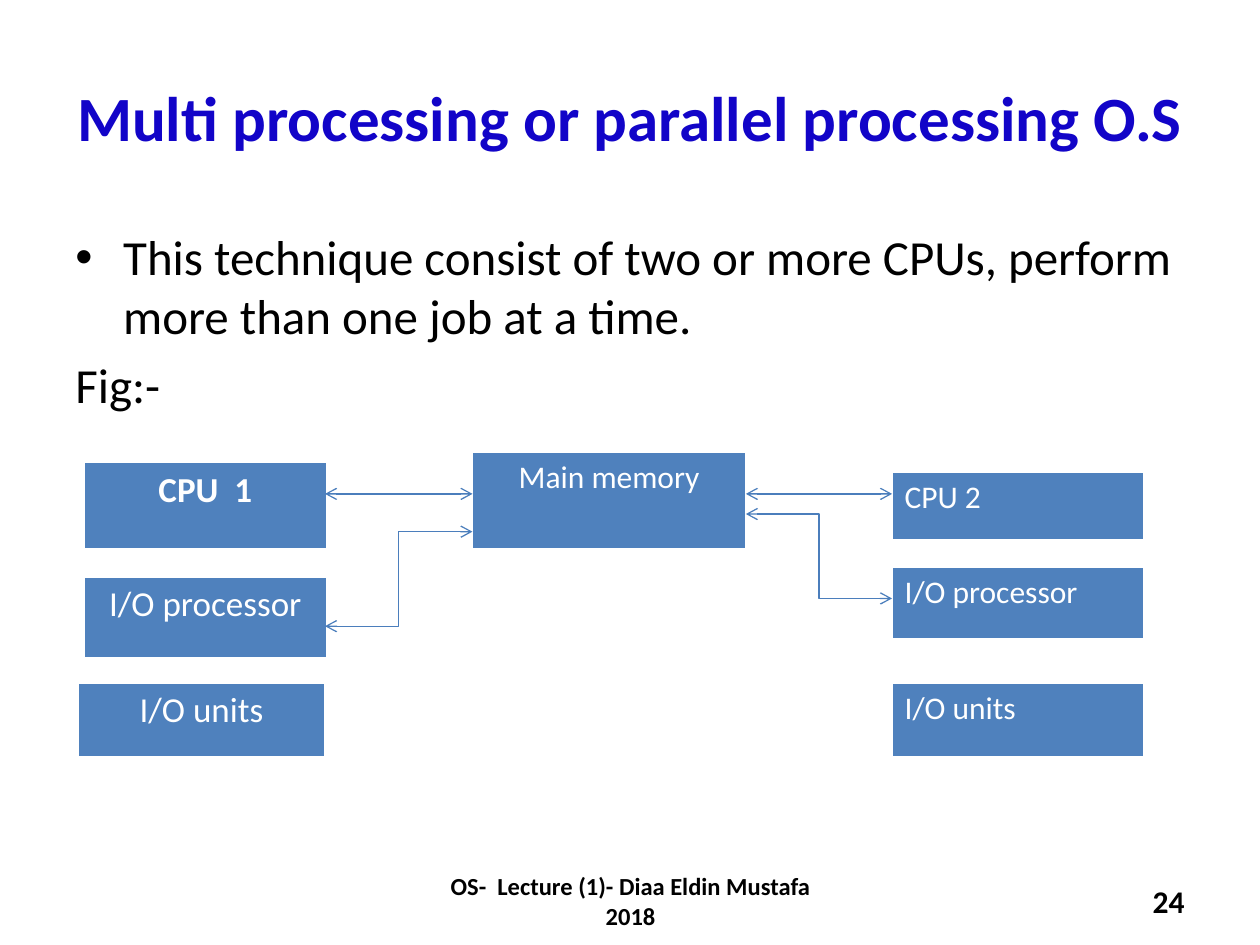
from lxml.etree import SubElement as Sub
from pptx import Presentation
from pptx.dml.color import RGBColor as RGB
from pptx.enum.shapes import MSO_CONNECTOR as Conn
from pptx.enum.text import MSO_ANCHOR as Anchor, PP_ALIGN as Align
from pptx.oxml.ns import qn
from pptx.util import Inches, Pt

INK = RGB(0x00, 0x00, 0x00)
NAVY = RGB(0x12, 0x04, 0xC8)
BLUE = RGB(0x4F, 0x81, 0xBD)
EDGE = RGB(0x4B, 0x7E, 0xBC)
WHITE = RGB(0xFF, 0xFF, 0xFF)


def write(para, text, size, color, bold=False, align=Align.LEFT):
    para.alignment = align
    run = para.add_run()
    run.text = text
    look = {"name": "Calibri", "size": Pt(size), "bold": bold}
    for key, value in look.items():
        setattr(run.font, key, value)
    run.font.color.rgb = color


def frame(box, anchor):
    look = {"word_wrap": True, "vertical_anchor": anchor}
    for key, value in look.items():
        setattr(box.text_frame, key, value)
    return box.text_frame


deck = Presentation()
deck.slide_width, deck.slide_height = Inches(10), Inches(7.5)
slide = deck.slides.add_slide(deck.slide_layouts[5])
shapes = slide.shapes

title = shapes.title
place = {"left": 0.5, "top": 0.3, "width": 9, "height": 1.25}
for key, value in place.items():
    setattr(title, key, Inches(value))
head = frame(title, Anchor.MIDDLE).paragraphs[0]
write(head, "Multi processing or parallel processing O.S", 36, NAVY, True, Align.CENTER)

body = shapes.add_textbox(Inches(0.5), Inches(1.75), Inches(9), Inches(4.95))
text = frame(body, Anchor.TOP)
lines = [
    ("This technique consist of two or more CPUs, perform more than one job at a time.", True),
    ("Fig:-", False),
]
for i, (line, dot) in enumerate(lines):
    para = text.add_paragraph() if i else text.paragraphs[0]
    write(para, line, 28, INK)
    para.space_before = Pt(5.6)
    props = para._p.get_or_add_pPr()
    props.set("marL", str(Inches(0.38)))
    props.set("indent", str(-Inches(0.38)))
    if dot:
        Sub(props, qn("a:buFont"), typeface="Arial")
        Sub(props, qn("a:buChar"), char="•")
    else:
        Sub(props, qn("a:buNone"))

units = [
    ("I/O processor", 0.67, 4.58, 1.92, 0.65, 20, False, Align.CENTER),
    ("CPU  1", 0.67, 3.67, 1.92, 0.7, 20, True, Align.CENTER),
    ("I/O units", 0.62, 5.42, 1.96, 0.6, 20, False, Align.CENTER),
    ("I/O units", 7.08, 5.42, 2, 0.6, 18, False, Align.LEFT),
    ("I/O processor", 7.08, 4.5, 2, 0.58, 18, False, Align.LEFT),
    ("CPU 2", 7.08, 3.75, 2, 0.55, 18, False, Align.LEFT),
    ("Main memory", 3.75, 3.59, 2.17, 0.78, 18, False, Align.CENTER),
]
sides = {"L": 1, "R": 1, "T": 1, "B": 3}
for name, left, top, width, height, size, bold, align in units:
    spot = [Inches(v) for v in (left, top, width, height)]
    table = shapes.add_table(1, 1, *spot).table
    table.first_row = table.horz_banding = False
    cell = table.cell(0, 0)
    write(cell.text_frame.paragraphs[0], name, size, WHITE, bold, align)
    props = cell._tc.get_or_add_tcPr()
    for side, points in sides.items():
        rule = Sub(props, qn("a:ln" + side), w=str(Pt(points)))
        Sub(Sub(rule, qn("a:solidFill")), qn("a:srgbClr"), val=str(WHITE))
    cell.fill.solid()
    cell.fill.fore_color.rgb = BLUE

links = [
    (Conn.STRAIGHT, 5.92, 3.92, 7.08, 3.92),
    (Conn.STRAIGHT, 2.58, 3.92, 3.75, 3.92),
    (Conn.ELBOW, 2.58, 4.97, 3.75, 4.22),
    (Conn.ELBOW, 5.92, 4.08, 7.08, 4.75),
]
for kind, *ends in links:
    link = shapes.add_connector(kind, *[Inches(v) for v in ends])
    link.line.color.rgb = EDGE
    link.line.width = Pt(0.75)
    stroke = link.line._get_or_add_ln()
    for tip in ("a:headEnd", "a:tailEnd"):
        Sub(stroke, qn(tip), type="arrow")
    Sub(link._element.spPr, qn("a:effectLst"))

notes = [
    ("24", 7.17, 2.33, 18, Align.RIGHT),
    ("OS-  Lecture (1)- Diaa Eldin Mustafa 2018", 3.42, 3.17, 14, Align.CENTER),
]
for line, left, width, size, align in notes:
    foot = shapes.add_textbox(Inches(left), Inches(6.95), Inches(width), Inches(0.4))
    write(frame(foot, Anchor.MIDDLE).paragraphs[0], line, size, INK, True, align)

deck.save("out.pptx")
